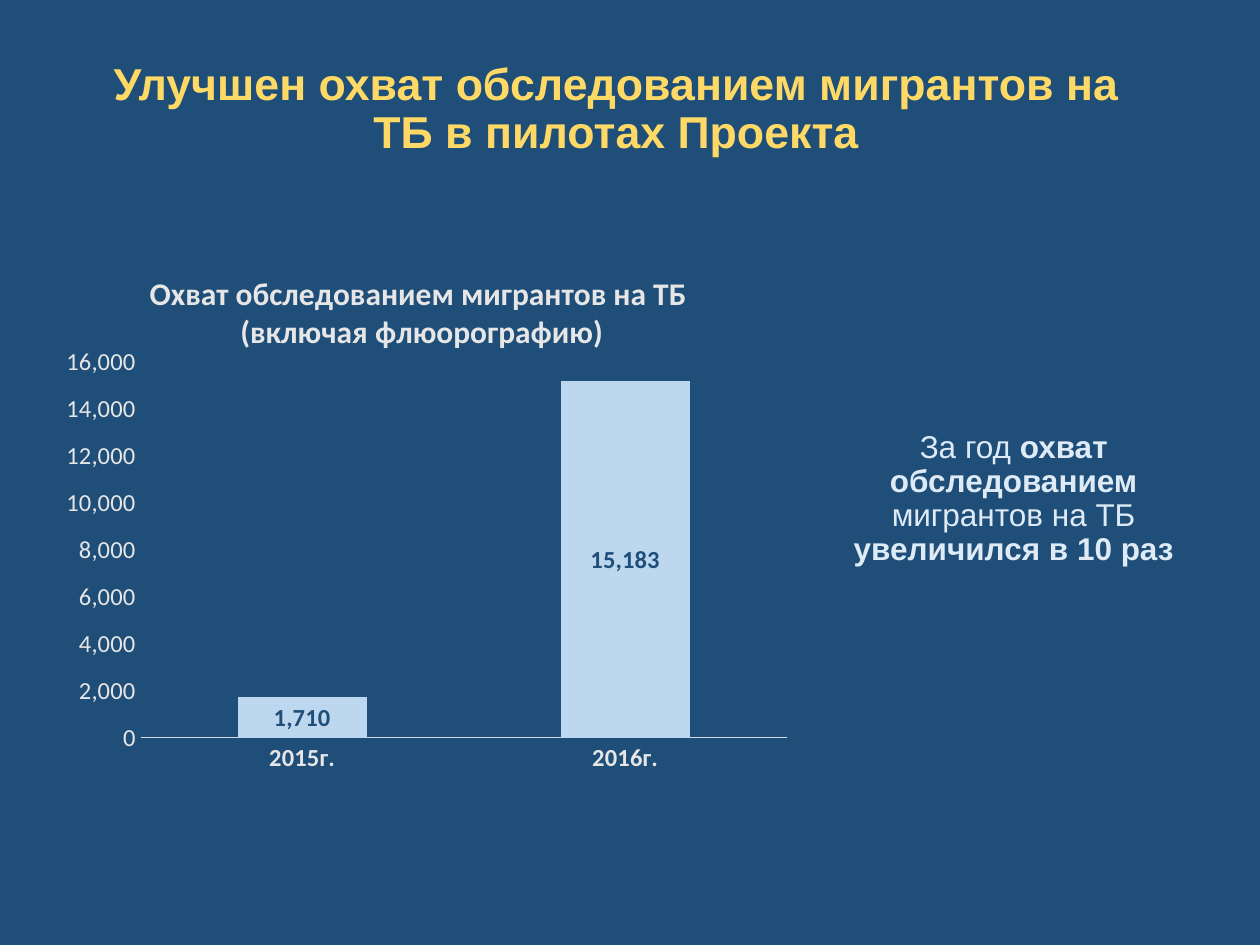
import pptx
import pptx.util
import pptx.chart.data
import pptx.dml.color
import pptx.enum.chart
import pptx.enum.text
import pptx.oxml

Pt = pptx.util.Pt

COLORS = {
    "background": "1F4E79",
    "heading": "FFD966",
    "message": "DEEBF7",
    "axis_text": "E7E6E6",
    "axis_line": "D9D9D9",
    "bar": "BDD7EE",
}
HEADING = [("Улучшен охват обследованием мигрантов на ТБ в пилотах Проекта", True)]
MESSAGE = [
    ("За год ", False),
    ("охват обследованием ", True),
    ("мигрантов на ТБ ", False),
    ("увеличился в 10 раз", True),
]
CHART_TITLE = ["Охват обследованием мигрантов на ТБ ", "(включая флюорографию)"]
SCREENED = {"2015г.": 1710, "2016г.": 15183}
NUMBER_FORMAT = "#,##0"
BOXES = {
    "heading": (41.76, 23.76, 620.64, 78.48),
    "message": (462.24, 180, 234, 210.24),
    "chart": (32.4, 144, 417.6, 306),
}
PLOT_AREA = {"x": 0.115, "y": 0.206, "w": 0.885, "h": 0.701}


def rgb(name):
    return pptx.dml.color.RGBColor.from_string(COLORS[name])


def box(name):
    return [Pt(length) for length in BOXES[name]]


def style_font(font, size, color, bold=None, name="Calibri"):
    font.name = name
    font.size = Pt(size)
    font.color.rgb = rgb(color)
    font.bold = bold


def write_text(shape, runs, size, color):
    frame = shape.text_frame
    frame.word_wrap = True
    frame.auto_size = pptx.enum.text.MSO_AUTO_SIZE.NONE
    frame.vertical_anchor = pptx.enum.text.MSO_ANCHOR.MIDDLE
    frame.margin_left = frame.margin_right = Pt(5.4)
    frame.margin_top = frame.margin_bottom = Pt(2.7)
    paragraph = frame.paragraphs[0]
    paragraph.alignment = pptx.enum.text.PP_ALIGN.CENTER
    paragraph.line_spacing = 0.9
    style_font(paragraph.font, size, color, name="Arial")
    for text, bold in runs:
        run = paragraph.add_run()
        run.text = text
        run.font.bold = bold


def set_plot_area(chart):
    sizes = "".join(f'<c:{key} val="{value}"/>' for key, value in PLOT_AREA.items())
    layout = pptx.oxml.parse_xml(
        '<c:layout xmlns:c="http://schemas.openxmlformats.org/drawingml/2006/chart">'
        '<c:manualLayout><c:layoutTarget val="inner"/>'
        f'<c:xMode val="edge"/><c:yMode val="edge"/>{sizes}</c:manualLayout></c:layout>'
    )
    plot_area = chart.plots[0]._element.getparent()
    for old_layout in plot_area.findall(layout.tag):
        plot_area.remove(old_layout)
    plot_area.insert(0, layout)


def add_screening_chart(slide):
    data = pptx.chart.data.CategoryChartData(number_format=NUMBER_FORMAT)
    data.categories = list(SCREENED)
    data.add_series("Охват обследованием", list(SCREENED.values()))
    kind = pptx.enum.chart.XL_CHART_TYPE.COLUMN_STACKED
    chart = slide.shapes.add_chart(kind, *box("chart"), data).chart
    chart.has_legend = False
    chart.font.name = "Calibri"
    chart.font.size = Pt(10)

    title_frame = chart.chart_title.text_frame
    title_frame.text = "\n".join(CHART_TITLE)
    for paragraph in title_frame.paragraphs:
        style_font(paragraph.font, 18, "axis_text", True)
    chart.chart_title.include_in_layout = False

    for axis, bold in ((chart.category_axis, True), (chart.value_axis, False)):
        axis.major_tick_mark = axis.minor_tick_mark = pptx.enum.chart.XL_TICK_MARK.NONE
        axis.has_major_gridlines = False
        style_font(axis.tick_labels.font, 14, "axis_text", bold)
    chart.category_axis.format.line.color.rgb = rgb("axis_line")
    chart.category_axis.format.line.width = Pt(0.75)
    value_axis = chart.value_axis
    value_axis.format.line.fill.background()
    value_axis.minimum_scale, value_axis.maximum_scale = 0, 16000
    value_axis.major_unit = 2000
    value_axis.tick_labels.number_format = NUMBER_FORMAT
    value_axis.tick_labels.number_format_is_linked = False

    plot = chart.plots[0]
    plot.vary_by_categories = False
    plot.gap_width, plot.overlap = 150, 100
    series = plot.series[0]
    series.format.fill.solid()
    series.format.fill.fore_color.rgb = rgb("bar")
    labels = series.data_labels
    labels.show_value = True
    labels.number_format = NUMBER_FORMAT
    labels.number_format_is_linked = False
    labels.position = pptx.enum.chart.XL_LABEL_POSITION.CENTER
    style_font(labels.font, 14, "background", True)
    set_plot_area(chart)


def main():
    """Build the slide on tuberculosis screening coverage of migrants."""
    presentation = pptx.Presentation()
    presentation.slide_width, presentation.slide_height = Pt(720), Pt(540)
    slide = presentation.slides.add_slide(presentation.slide_layouts[5])
    slide.background.fill.solid()
    slide.background.fill.fore_color.rgb = rgb("background")

    heading = slide.shapes.title
    heading.left, heading.top, heading.width, heading.height = box("heading")
    write_text(heading, HEADING, 25.5, "heading")
    message = slide.shapes.add_textbox(*box("message"))
    write_text(message, MESSAGE, 18, "message")
    add_screening_chart(slide)
    presentation.save("out.pptx")


if __name__ == "__main__":
    main()
